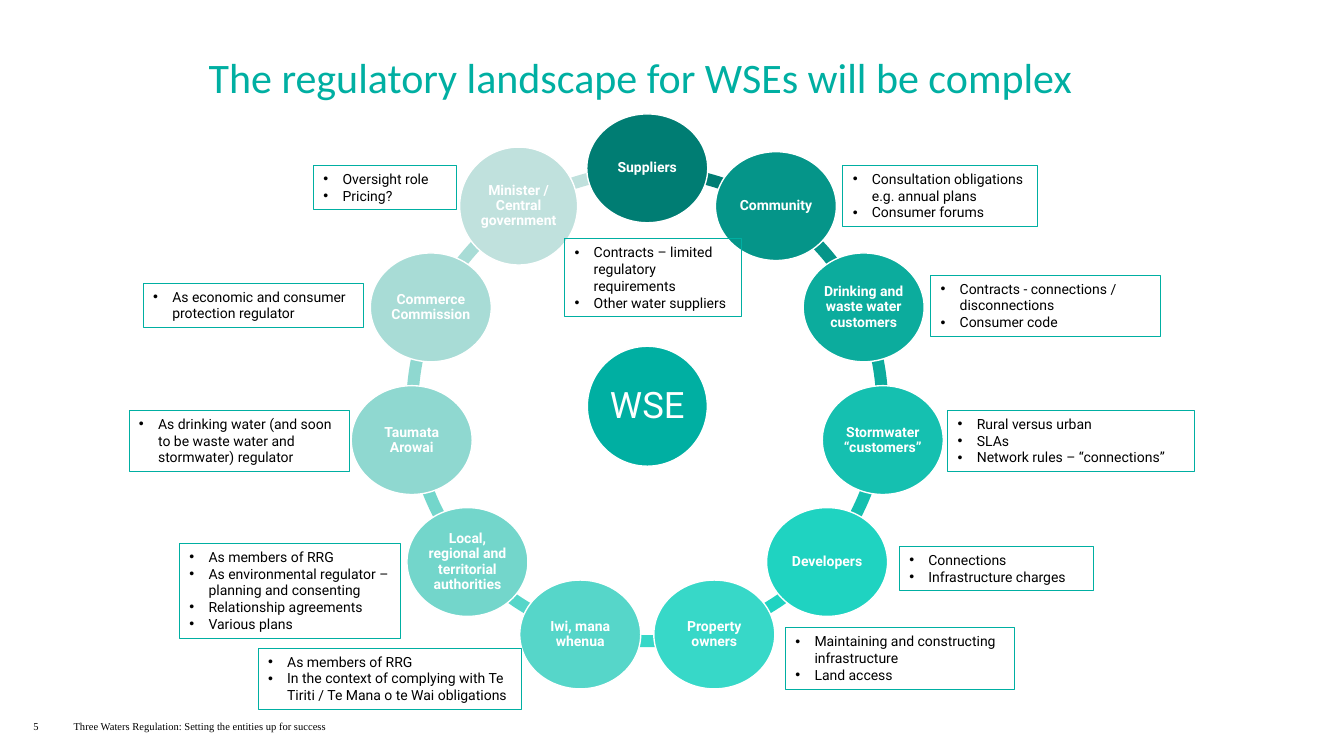
"""Build the slide on the regulatory landscape around a water services entity."""
import math
from collections import namedtuple
from dataclasses import dataclass

from lxml import etree
from pptx import Presentation
from pptx import util as u
from pptx.dml.color import RGBColor
from pptx.enum import shapes, text
from pptx.oxml import ns

Box = namedtuple("Box", "left top width height")
Party = namedtuple("Party", "name colour note_box notes")


@dataclass(frozen=True)
class Theme:
    accent: str = "00AFA2"
    ink: str = "000000"
    paper: str = "FFFFFF"
    title_font: str = "Calibri"
    body_font: str = "Roboto"
    footer_font: str = "Times New Roman"
    title_size: float = 30
    hub_size: float = 26
    body_size: float = 10
    footer_size: float = 7.5


THEME = Theme()
RING = Box(4.03, 1.64, 4.78, 4.78)
ORBIT = 2.36
HUB = 1.19
NODE = (1.2, 1.08)
ROUND_NODE = (1.17, 1.17)
MINISTER = "Minister / Central government"

PARTIES = [
    Party("Suppliers", "007D73", Box(5.6, 2.37, 1.75, 0.77),
          ["Contracts – limited regulatory requirements", "Other water suppliers"]),
    Party("Community", "059589", Box(8.36, 1.64, 1.93, 0.61),
          ["Consultation obligations e.g. annual plans", "Consumer forums"]),
    Party("Drinking and waste water customers", "0CAC9D", Box(9.23, 2.73, 2.28, 0.61),
          ["Contracts - connections / disconnections", "Consumer code"]),
    Party("Stormwater “customers”", "15C0B0", Box(9.4, 4.07, 2.45, 0.61),
          ["Rural versus urban", "SLAs", "Network rules – “connections”"]),
    Party("Developers", "1FD3C1", Box(8.92, 5.42, 1.93, 0.44),
          ["Connections", "Infrastructure charges"]),
    Party("Property owners", "37D8C8", Box(7.79, 6.23, 2.27, 0.61),
          ["Maintaining and constructing infrastructure", "Land access"]),
    Party("Iwi, mana whenua", "56D6C9", Box(2.56, 6.43, 2.61, 0.61),
          ["As members of RRG",
           "In the context of complying with Te Tiriti / Te Mana o te Wai obligations"]),
    Party("Local, regional and territorial authorities", "73D6CB", Box(1.78, 5.39, 2.19, 0.94),
          ["As members of RRG", "As environmental regulator – planning and consenting",
           "Relationship agreements", "Various plans"]),
    Party("Taumata Arowai", "8FD8D0", Box(1.28, 4.07, 2.19, 0.61),
          ["As drinking water (and soon to be waste water and stormwater) regulator"]),
    Party("Commerce Commission", "A8DCD6", Box(1.42, 2.81, 2.19, 0.44),
          ["As economic and consumer protection regulator"]),
    Party(MINISTER, "C0E1DD", Box(3.11, 1.64, 1.42, 0.44),
          ["Oversight role", "Pricing?"]),
]


def inches(box):
    """Turn a box into four lengths."""
    return [u.Inches(v) for v in box]


def set_font(p, name, size, colour, bold=False):
    """Format a whole paragraph."""
    p.font.name, p.font.size, p.font.bold = name, u.Pt(size), bold
    p.font.color.rgb = RGBColor.from_string(colour)


def set_frame(tf, anchor, side, end):
    """Set wrapping, anchor and insets of a text frame."""
    tf.word_wrap = True
    tf.vertical_anchor = anchor
    tf.margin_left = tf.margin_right = u.Inches(side)
    tf.margin_top = tf.margin_bottom = u.Inches(end)


def add_preset(s, kind, box, fill=None, line=None, weight=1):
    """Add a flat preset shape."""
    sp = s.shapes.add_shape(kind, *inches(box))
    sp.shadow.inherit = False
    if fill:
        sp.fill.solid()
        sp.fill.fore_color.rgb = RGBColor.from_string(fill)
    else:
        sp.fill.background()
    if line:
        sp.line.color.rgb = RGBColor.from_string(line)
        sp.line.width = u.Pt(weight)
    else:
        sp.line.fill.background()
    return sp


def add_disc(s, x, y, size, fill, label, points, inset, bold):
    """Add a labelled ellipse centred on a point."""
    width, height = size
    box = Box(x - width / 2, y - height / 2, width, height)
    sp = add_preset(s, shapes.MSO_SHAPE.OVAL, box, fill, THEME.paper)
    tf = sp.text_frame
    set_frame(tf, text.MSO_ANCHOR.MIDDLE, inset, inset)
    p = tf.paragraphs[0]
    p.text, p.alignment, p.line_spacing = label, text.PP_ALIGN.CENTER, 0.9
    set_font(p, THEME.body_font, points, THEME.paper, bold)


def add_ring(s, box, parties):
    """Draw the hub, the arcs and the ring of parties inside a box."""
    x, y = box.left + box.width / 2, box.top + box.height / 2
    step = 360 / len(parties)
    for i, party in enumerate(parties):
        arc = add_preset(s, shapes.MSO_SHAPE.BLOCK_ARC, box, party.colour)
        for k in range(2):
            arc.adjustments[k] = (270 + (i + k) * step) % 360 * 0.6
        arc.adjustments[2] = 0.025
    add_disc(s, x, y, (HUB, HUB), THEME.accent, "WSE", THEME.hub_size, 0.04, False)
    for i, party in enumerate(parties):
        angle = math.radians(i * step)
        size = ROUND_NODE if party.name == MINISTER else NODE
        add_disc(s, x + ORBIT * math.sin(angle), y - ORBIT * math.cos(angle), size,
                 party.colour, party.name, THEME.body_size, 0.01, True)


def add_notes_box(s, box, notes):
    """Add an outlined box with a bulleted list."""
    sp = add_preset(s, shapes.MSO_SHAPE.RECTANGLE, box, line=THEME.accent, weight=0.75)
    tf = sp.text_frame
    set_frame(tf, text.MSO_ANCHOR.TOP, 0.1, 0.05)
    for i, note in enumerate(notes):
        p = tf.add_paragraph() if i else tf.paragraphs[0]
        p.text, p.alignment = note, text.PP_ALIGN.LEFT
        props = p._p.get_or_add_pPr()
        props.set("marL", str(u.Inches(0.19)))
        props.set("indent", str(-u.Inches(0.19)))
        etree.SubElement(props, ns.qn("a:buFont")).set("typeface", "Arial")
        etree.SubElement(props, ns.qn("a:buChar")).set("char", "•")
        set_font(p, THEME.body_font, THEME.body_size, THEME.ink)


def add_title(s, box, label):
    """Place and format the title placeholder."""
    sp = s.shapes.title
    sp.left, sp.top, sp.width, sp.height = inches(box)
    set_frame(sp.text_frame, text.MSO_ANCHOR.MIDDLE, 0.1, 0.05)
    p = sp.text_frame.paragraphs[0]
    p.text, p.alignment, p.line_spacing = label, text.PP_ALIGN.CENTER, 0.9
    set_font(p, THEME.title_font, THEME.title_size, THEME.accent)


def add_footer(s, box, number, label):
    """Add the page number and the running footer."""
    gap = 0.4
    number_box = box._replace(width=0.28)
    label_box = box._replace(left=box.left + gap, width=box.width - gap)
    for part, words in ((number_box, number), (label_box, label)):
        tf = s.shapes.add_textbox(*inches(part)).text_frame
        set_frame(tf, text.MSO_ANCHOR.MIDDLE, 0, 0.05)
        p = tf.paragraphs[0]
        p.text = words
        set_font(p, THEME.footer_font, THEME.footer_size, THEME.ink)


def main():
    """Build and save the presentation."""
    prs = Presentation()
    prs.slide_width, prs.slide_height = u.Inches(13.33), u.Inches(7.5)
    s = prs.slides.add_slide(prs.slide_layouts[5])
    add_title(s, Box(0.61, 0.51, 11.49, 0.56),
              "The regulatory landscape for WSEs will be complex")
    add_footer(s, Box(0.33, 7.09, 4.9, 0.23), "5",
               "Three Waters Regulation: Setting the entities up for success")
    add_ring(s, RING, PARTIES)
    for party in PARTIES:
        add_notes_box(s, party.note_box, party.notes)
    prs.save("out.pptx")


if __name__ == "__main__":
    main()
